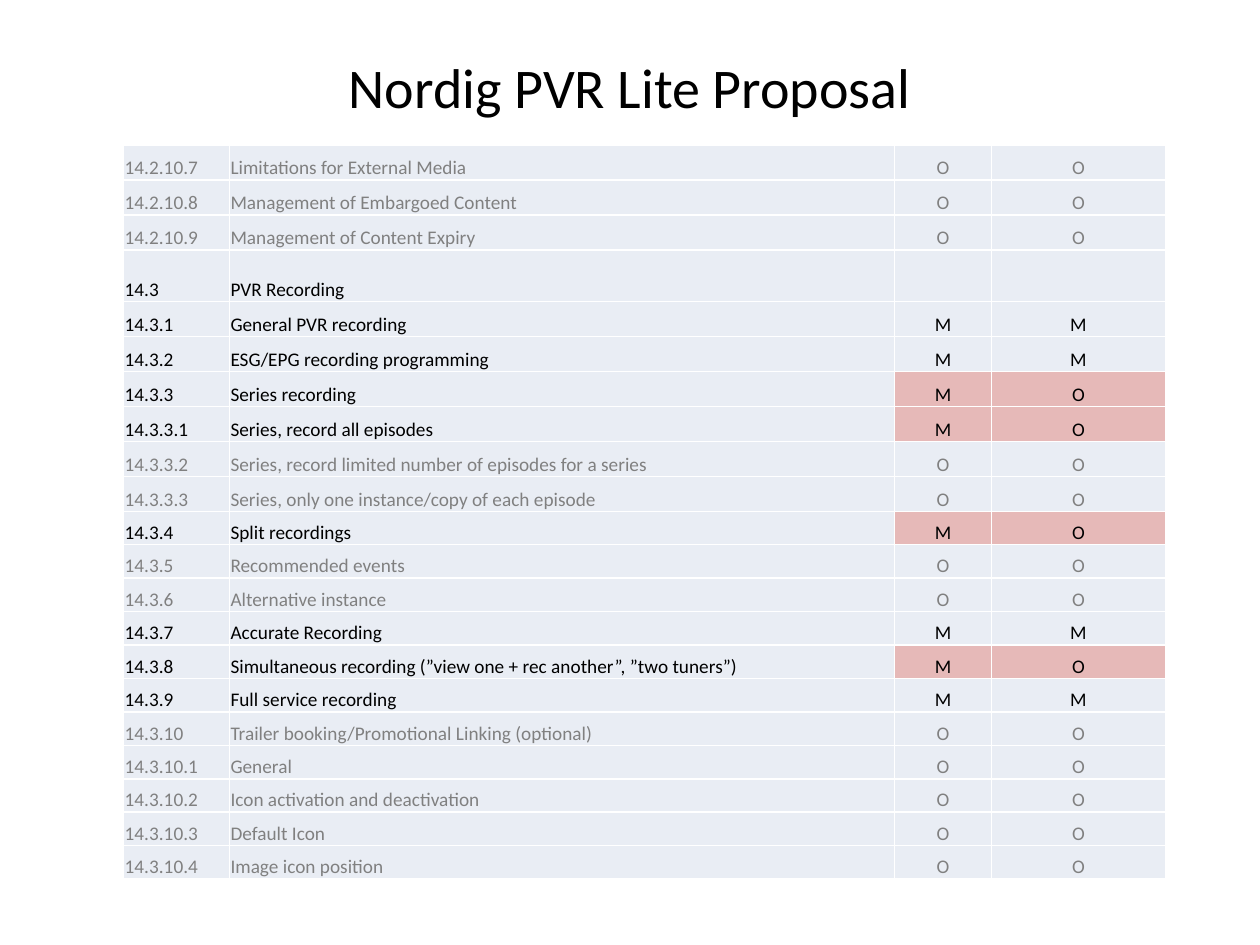
from pptx import Presentation
from pptx.dml.color import RGBColor
from pptx.enum.text import MSO_ANCHOR as Anchor, PP_ALIGN as Align
from pptx.util import Inches, Pt

COLORS = {
    "text": "000000",
    "optional": "808080",
    "cell": "E9EDF4",
    "changed": "E6B9B8",
}

# Section, feature, level in the full profile, level in the lite profile
REQUIREMENTS = [
    ("14.2.10.7", "Limitations for External Media", "O", "O"),
    ("14.2.10.8", "Management of Embargoed Content", "O", "O"),
    ("14.2.10.9", "Management of Content Expiry", "O", "O"),
    ("14.3", "PVR Recording", "", ""),
    ("14.3.1", "General PVR recording", "M", "M"),
    ("14.3.2", "ESG/EPG recording programming", "M", "M"),
    ("14.3.3", "Series recording", "M", "O"),
    ("14.3.3.1", "Series, record all episodes", "M", "O"),
    ("14.3.3.2", "Series, record limited number of episodes for a series", "O", "O"),
    ("14.3.3.3", "Series, only one instance/copy of each episode", "O", "O"),
    ("14.3.4", "Split recordings", "M", "O"),
    ("14.3.5", "Recommended events", "O", "O"),
    ("14.3.6", "Alternative instance", "O", "O"),
    ("14.3.7", "Accurate Recording", "M", "M"),
    ("14.3.8", "Simultaneous recording (”view one + rec another”, ”two tuners”)", "M", "O"),
    ("14.3.9", "Full service recording", "M", "M"),
    ("14.3.10", "Trailer booking/Promotional Linking (optional)", "O", "O"),
    ("14.3.10.1", "General", "O", "O"),
    ("14.3.10.2", "Icon activation and deactivation", "O", "O"),
    ("14.3.10.3", "Default Icon", "O", "O"),
    ("14.3.10.4", "Image icon position", "O", "O"),
]
COLUMN_WIDTHS = [0.84, 5.28, 0.77, 1.38]
HEADING_ROW = 3
UPPER_ROWS = 10  # slightly taller than the rows below them


def write(frame, text, *, size, color, align=Align.LEFT):
    paragraph = frame.paragraphs[0]
    paragraph.alignment = align
    run = paragraph.add_run()
    run.text = text
    run.font.name = "Calibri"
    run.font.size = Pt(size)
    run.font.color.rgb = RGBColor.from_string(COLORS[color])


prs = Presentation()
prs.slide_width, prs.slide_height = Inches(10), Inches(7.5)
slide = prs.slides.add_slide(prs.slide_layouts[5])

title = slide.shapes.title
title.left, title.top = Inches(0.5), Inches(0.3)
title.width, title.height = Inches(9), Inches(0.77)
title.text_frame.vertical_anchor = Anchor.MIDDLE
write(title.text_frame, "Nordig PVR Lite Proposal", size=32, color="text", align=Align.CENTER)

table = slide.shapes.add_table(
    len(REQUIREMENTS), len(COLUMN_WIDTHS),
    Inches(0.98), Inches(1.15), Inches(8.27), Inches(5.83),
).table
table.first_row = False
table.horz_banding = False

for column, width in zip(table.columns, COLUMN_WIDTHS):
    column.width = Inches(width)

upper_height = Inches(2.5) // (UPPER_ROWS - 1)
lower_height = Inches(2.92) // (len(REQUIREMENTS) - UPPER_ROWS)
for index, row in enumerate(table.rows):
    row.height = upper_height if index < UPPER_ROWS else lower_height
table.rows[HEADING_ROW].height = Inches(0.41)

for row, requirement in zip(table.rows, REQUIREMENTS):
    full_level, lite_level = requirement[2:]
    text_color = "optional" if full_level == "O" else "text"
    for index, (cell, text) in enumerate(zip(row.cells, requirement)):
        is_level = index >= 2
        changed = is_level and full_level != lite_level
        cell.fill.solid()
        cell.fill.fore_color.rgb = RGBColor.from_string(COLORS["changed" if changed else "cell"])
        cell.vertical_anchor = Anchor.BOTTOM
        cell.margin_left = cell.margin_right = cell.margin_top = Inches(0.01)
        cell.margin_bottom = 0
        if text:
            write(cell.text_frame, text, size=11, color=text_color,
                  align=Align.CENTER if is_level else Align.LEFT)

prs.save("out.pptx")
